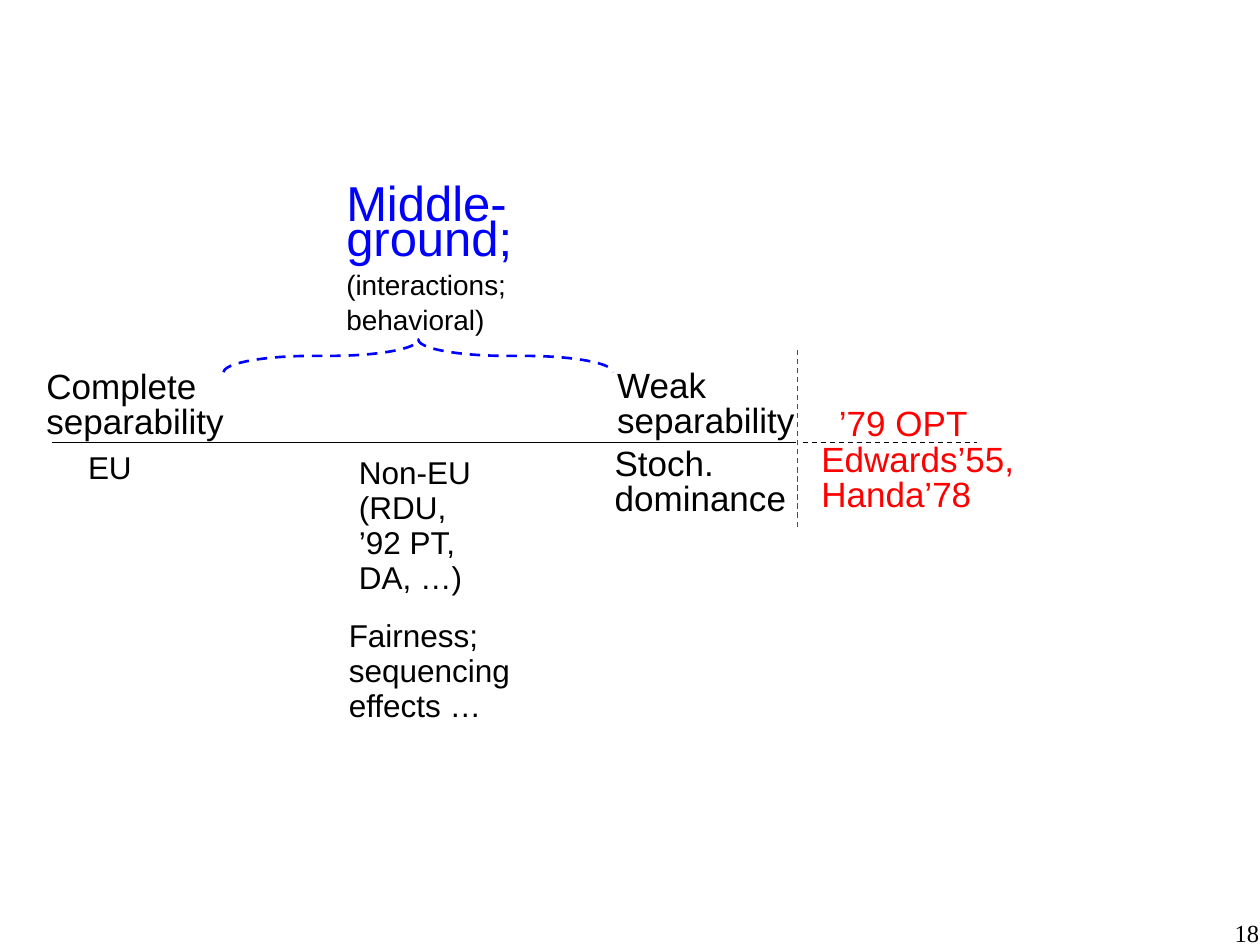
import pptx
import pptx.util
import pptx.dml.color
import pptx.enum.dml
import pptx.enum.shapes
import pptx.oxml.ns
import lxml.etree

Inches, Pt = pptx.util.Inches, pptx.util.Pt
BLACK, BLUE, RED = "000000", "0000FF", "FF0000"

deck = pptx.Presentation()
deck.slide_width, deck.slide_height = Inches(10), Inches(7.5)
slide = deck.slides.add_slide(deck.slide_layouts[6])


def color(code):
    return pptx.dml.color.RGBColor.from_string(code)


def stroke(line, code, width, dash):
    line.color.rgb = color(code)
    line.width = Pt(width)
    if dash:
        line.dash_style = pptx.enum.dml.MSO_LINE.DASH


labels = [
    (6.42, 3.48, 1.73, 0.66, 20, RED, ["Edwards’55,", "Handa’78"]),
    (0.27, 2.9, 1.92, 0.66, 20, BLACK, ["Complete separability"]),
    (4.8, 2.89, 1.92, 0.66, 20, BLACK, ["Weak separability"]),
    (6.56, 3.19, 1.32, 0.38, 20, RED, ["’79 OPT"]),
    (0.6, 3.53, 0.82, 0.38, 18, BLACK, ["EU"]),
    (4.78, 3.51, 1.63, 0.66, 20, BLACK, ["Stoch. dominance"]),
    (2.75, 3.57, 1.63, 1.22, 18, BLACK, ["Non-EU (RDU,", "’92 PT, \vDA, …)"]),
    (2.67, 4.86, 1.63, 0.94, 18, BLACK, ["Fairness; sequencing effects …"]),
]
for left, top, width, height, size, code, rows in labels:
    box = slide.shapes.add_textbox(Inches(left), Inches(top), Inches(width), Inches(height))
    frame = box.text_frame
    frame.word_wrap = True
    frame.text = "\n".join(rows)
    for para in frame.paragraphs:
        para.line_spacing = Pt(20)
        para.font.name = "Arial"
        para.font.size = Pt(size)
        para.font.color.rgb = color(code)

lines = [
    (0.41, 3.51, 6.32, 3.51, BLACK, False),
    (6.37, 3.51, 7.75, 3.51, BLACK, True),
    (6.33, 4.18, 6.33, 2.75, RED, True),
]
for x1, y1, x2, y2, code, dash in lines:
    line = slide.shapes.add_connector(
        pptx.enum.shapes.MSO_CONNECTOR.STRAIGHT, Inches(x1), Inches(y1), Inches(x2), Inches(y2))
    stroke(line.line, code, 0.75, dash)
    lxml.etree.SubElement(line._element.spPr, pptx.oxml.ns.qn("a:effectLst"))

brace = slide.shapes.add_shape(
    pptx.enum.shapes.MSO_SHAPE.LEFT_BRACE, Inches(3.19), Inches(1.28), Inches(0.26), Inches(3.09))
brace.rotation = 90
brace.adjustments[0] = 2.71
brace.shadow.inherit = False
brace.fill.background()
stroke(brace.line, BLUE, 1.5, True)

box = slide.shapes.add_textbox(Inches(2.65), Inches(1.51), Inches(1.97), Inches(1.22))
box.text_frame.word_wrap = True
para = box.text_frame.paragraphs[0]
para.line_spacing = Pt(20)
para.font.name = "Arial"
parts = [("Middle-ground;", 28, BLUE), (" ", 20, BLUE), ("(interactions; behavioral)", 16, BLACK)]
for text, size, code in parts:
    run = para.add_run()
    run.text = text
    run.font.size = Pt(size)
    run.font.color.rgb = color(code)

box = slide.shapes.add_textbox(Inches(9.7), Inches(7.24), Inches(0.59), Inches(0.34))
box.text_frame.word_wrap = True
para = box.text_frame.paragraphs[0]
para.text = "18"
para.font.name = "Times New Roman"
para.font.size = Pt(14)
para.font.color.rgb = color(BLACK)

deck.save("out.pptx")
